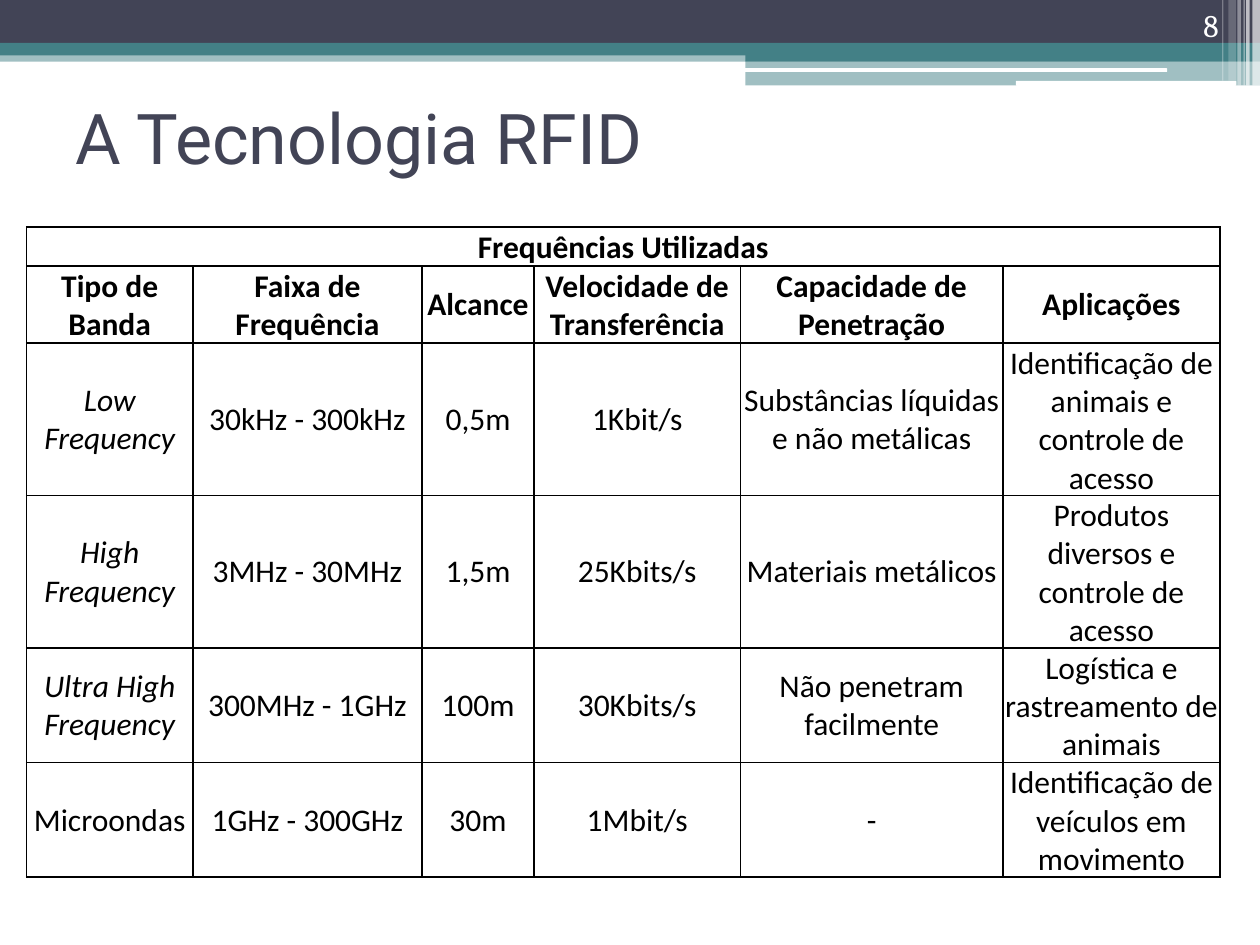
from pptx import Presentation
from pptx.dml.color import RGBColor
from pptx.enum.shapes import MSO_SHAPE
from pptx.enum.text import MSO_ANCHOR, PP_ALIGN
from pptx.oxml.ns import qn
from pptx.util import Pt
from lxml.etree import SubElement

NAVY, TEAL, WHITE, BLACK = "424456", "438086", "FFFFFF", "000000"

# left, top, width, height, colour, opacity in percent
BANDS = [
    (0, 28.8, 720, 6.5, TEAL, 50),
    (0, 0, 720, 24.5, NAVY, 100),
    (0, 24.5, 720, 7.2, TEAL, 100),
    (426, 28.1, 294, 7, TEAL, 100),
    (426, 34.6, 294, 14.2, TEAL, 50),
]
LINES = [(425.5, 39, 241.5, 2.1), (580.5, 46.2, 126, 2.8)]
# left, width, height, opacity in percent
STRIPES = [
    (715.7, 4.3, 49, 65), (712.1, 2, 49, 65), (710.6, 0.7, 49, 60),
    (707.1, 2, 49, 40), (702, 4.3, 46.1, 20), (698.4, 0.7, 46.1, 30),
]

COLS = [95, 131, 64, 118, 150, 124]
ROWS = [16, 32, 63, 63, 48, 48]
HEADING = "Frequências Utilizadas"
DATA = [
    ["Tipo de Banda", "Faixa de Frequência", "Alcance",
     "Velocidade de Transferência", "Capacidade de Penetração", "Aplicações"],
    ["Low Frequency", "30kHz - 300kHz", "0,5m", "1Kbit/s",
     "Substâncias líquidas e não metálicas",
     "Identificação de animais e controle de acesso"],
    ["High Frequency", "3MHz - 30MHz", "1,5m", "25Kbits/s",
     "Materiais metálicos", "Produtos diversos e controle de acesso"],
    ["Ultra High Frequency", "300MHz - 1GHz", "100m", "30Kbits/s",
     "Não penetram facilmente", "Logística e rastreamento de animais"],
    ["Microondas", "1GHz - 300GHz", "30m", "1Mbit/s", "-",
     "Identificação de veículos em movimento"],
]


def color(text):
    return RGBColor.from_string(text)


def style(para, font, size, tone, align, bold=False, italic=False):
    para.alignment = align
    for run in para.runs:
        run.font.name = font
        run.font.size = Pt(size)
        run.font.color.rgb = color(tone)
        run.font.bold = bold
        run.font.italic = italic


def add_bar(slide, box, tone, alpha=100, kind=MSO_SHAPE.RECTANGLE):
    bar = slide.shapes.add_shape(kind, *map(Pt, box))
    bar.shadow.inherit = False
    bar.fill.solid()
    bar.fill.fore_color.rgb = color(tone)
    bar.line.fill.background()
    if alpha < 100:
        fill = bar.fill._xPr.find(qn("a:solidFill"))
        SubElement(fill[0], qn("a:alpha"), val=str(alpha * 1000))


def add_banner(slide, left, top):
    for x, y, wide, high, tone, alpha in BANDS:
        add_bar(slide, (left + x, top + y, wide, high), tone, alpha)
    for x, y, wide, high in LINES:
        add_bar(slide, (left + x, top + y, wide, high), WHITE,
                kind=MSO_SHAPE.ROUNDED_RECTANGLE)
    for x, wide, high, alpha in STRIPES:
        add_bar(slide, (left + x, top, wide, high), WHITE, alpha)


def add_text(slide, box, text, font, size, tone, align, anchor):
    frame = slide.shapes.add_textbox(*map(Pt, box)).text_frame
    frame.word_wrap = True
    frame.vertical_anchor = anchor
    frame.text = text
    style(frame.paragraphs[0], font, size, tone, align)


def add_border(cell):
    props = cell._tc.get_or_add_tcPr()
    for place, side in enumerate(("lnL", "lnR", "lnT", "lnB")):
        line = SubElement(props, qn("a:" + side), w=str(Pt(1)))
        fill = SubElement(line, qn("a:solidFill"))
        SubElement(fill, qn("a:srgbClr"), val=BLACK)
        props.insert(place, line)


def set_cell(cell, text, bold, italic):
    cell.fill.solid()
    cell.fill.fore_color.rgb = color(WHITE)
    cell.margin_left = cell.margin_right = cell.margin_top = Pt(0.72)
    cell.margin_bottom = 0
    cell.vertical_anchor = MSO_ANCHOR.MIDDLE
    cell.text = text
    style(cell.text_frame.paragraphs[0], "Calibri", 18, BLACK,
          PP_ALIGN.CENTER, bold, italic)
    add_border(cell)


def add_grid(slide, left, top, wide, high):
    frame = slide.shapes.add_table(len(ROWS), len(COLS), Pt(left), Pt(top),
                                   Pt(wide), Pt(high))
    table = frame.table
    for col, size in zip(table.columns, COLS):
        col.width = Pt(size)
    for row, size in zip(table.rows, ROWS):
        row.height = Pt(size)
    frame.height = Pt(high)

    # Heading across all columns
    table.cell(0, 0).merge(table.cell(0, len(COLS) - 1))
    heads = [HEADING] + [""] * (len(COLS) - 1)
    for r, texts in enumerate([heads] + DATA):
        for c, text in enumerate(texts):
            # English band names are in italics
            set_cell(table.cell(r, c), text, r < 2,
                     c == 0 and "Frequency" in text)


def main():
    deck = Presentation()
    deck.slide_width, deck.slide_height = Pt(720), Pt(540)
    slide = deck.slides.add_slide(deck.slide_layouts[6])
    add_banner(slide, 0, 0)
    # Title
    add_text(slide, (36, 36, 648, 84), "A Tecnologia RFID", "Roboto", 40,
             NAVY, PP_ALIGN.LEFT, MSO_ANCHOR.MIDDLE)
    # Frequency table
    add_grid(slide, 15.2, 129.6, sum(COLS), 371.5)
    # Page number
    add_text(slide, (643.7, 0, 59.8, 28.8), "8", "Cambria", 18,
             WHITE, PP_ALIGN.RIGHT, MSO_ANCHOR.BOTTOM)
    deck.save("out.pptx")


if __name__ == "__main__":
    main()
